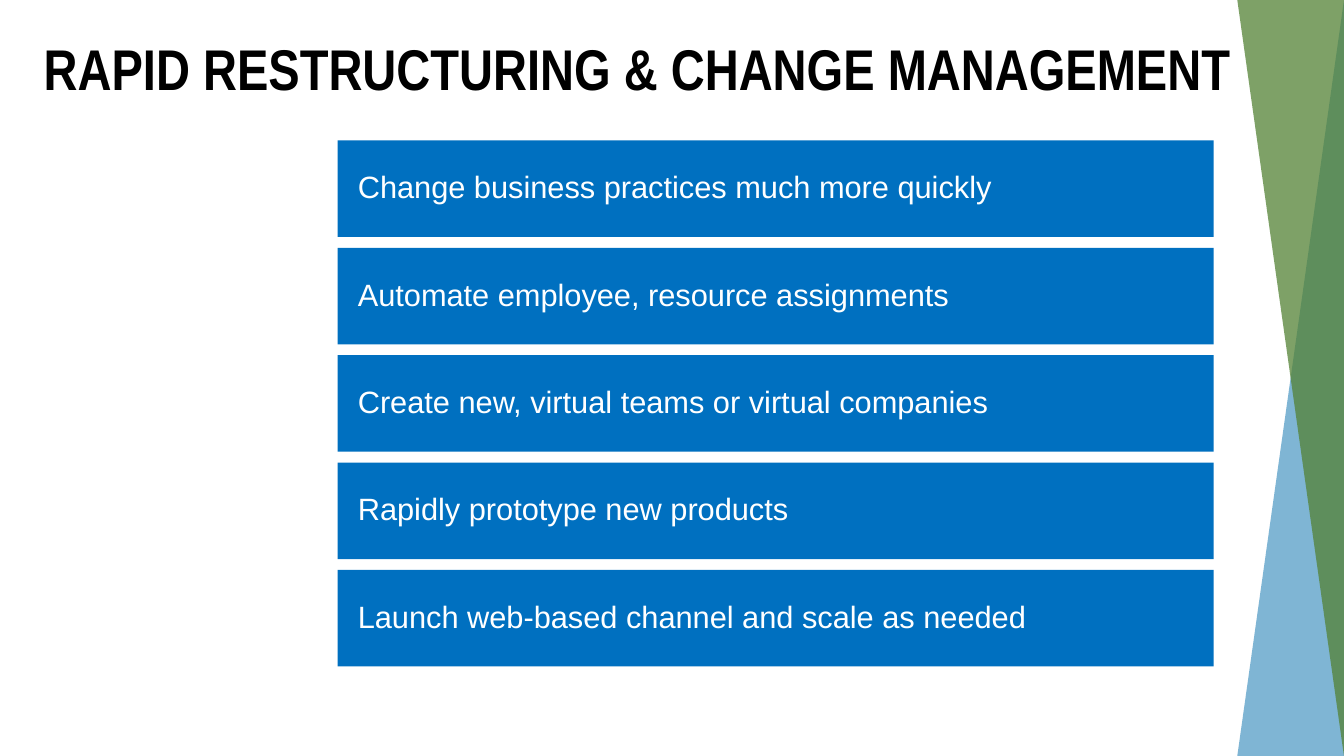
from lxml import etree
from pptx import Presentation
from pptx.dml.color import RGBColor
from pptx.enum.shapes import MSO_SHAPE
from pptx.enum.text import MSO_ANCHOR, MSO_AUTO_SIZE, PP_ALIGN
from pptx.oxml.ns import qn
from pptx.util import Pt

RECTANGLE = MSO_SHAPE.RECTANGLE
TOP, MIDDLE = MSO_ANCHOR.TOP, MSO_ANCHOR.MIDDLE
LEFT = PP_ALIGN.LEFT
FIXED_SIZE = MSO_AUTO_SIZE.NONE

COLOURS = {
    "title": "000000",
    "bar": "0070C0",
    "bar_text": "FFFFFF",
    "blue_wedge": "006CAB",
    "green_wedge": "548235",
}
TITLE = "RAPID RESTRUCTURING & CHANGE MANAGEMENT"
PRACTICES = [
    "Change business practices much more quickly",
    "Automate employee, resource assignments",
    "Create new, virtual teams or virtual companies",
    "Rapidly prototype new products",
    "Launch web-based channel and scale as needed",
]
PAGE_WIDTH, PAGE_HEIGHT = 960, 540
BAR_GAP = 7.7


def colour(name):
    return RGBColor.from_string(COLOURS[name])


def style_text(frame, text, font_name, size, colour_name, bold):
    frame.word_wrap = True
    frame.auto_size = FIXED_SIZE
    para = frame.paragraphs[0]
    para.text = text
    para.alignment = LEFT
    para.line_spacing = 0.9
    para.space_before = Pt(0)
    para.font.name = font_name
    para.font.size = Pt(size)
    para.font.bold = bold
    para.font.color.rgb = colour(colour_name)


def add_wedge(page, points, colour_name, opacity):
    corners = [(Pt(x), Pt(y)) for x, y in points]
    builder = page.shapes.build_freeform(*corners[0], scale=1.0)
    builder.add_line_segments(corners[1:], close=True)
    wedge = builder.convert_to_shape()
    wedge.shadow.inherit = False
    wedge.fill.solid()
    wedge.fill.fore_color.rgb = colour(colour_name)
    wedge.line.fill.background()
    fill_colour = wedge.fill._xPr.find(qn("a:solidFill"))[0]
    alpha = etree.SubElement(fill_colour, qn("a:alpha"))
    alpha.set("val", str(opacity * 1000))


def add_side_panel(page, left, top, width, height):
    right, bottom = left + width, top + height
    add_wedge(page, [(left, bottom), (right, bottom), (right, top)], "blue_wedge", 50)
    add_wedge(page, [(left, top), (right, top), (right, bottom)], "green_wedge", 75)


def add_title(page, left, top, width, height):
    title = page.shapes.title
    title.left, title.top = Pt(left), Pt(top)
    title.width, title.height = Pt(width), Pt(height)
    title.text_frame.vertical_anchor = TOP
    style_text(title.text_frame, TITLE, "Arial Narrow", 41, "title", True)


def add_practice_bars(page, left, top, width, height):
    count = len(PRACTICES)
    bar_height = (height - BAR_GAP * (count - 1)) / count
    for index, practice in enumerate(PRACTICES):
        bar_top = top + index * (bar_height + BAR_GAP)
        bar = page.shapes.add_shape(
            RECTANGLE, Pt(left), Pt(bar_top), Pt(width), Pt(bar_height)
        )
        bar.shadow.inherit = False
        bar.fill.solid()
        bar.fill.fore_color.rgb = colour("bar")
        bar.line.fill.background()
        frame = bar.text_frame
        frame.margin_left = frame.margin_right = Pt(14.4)
        frame.margin_top = frame.margin_bottom = Pt(11.5)
        frame.vertical_anchor = MIDDLE
        style_text(frame, practice, "Arial", 22, "bar_text", False)


def main():
    deck = Presentation()
    deck.slide_width, deck.slide_height = Pt(PAGE_WIDTH), Pt(PAGE_HEIGHT)
    page = deck.slides.add_slide(deck.slide_layouts[5])
    add_side_panel(page, 883.8, 0, 76.2, PAGE_HEIGHT)
    add_title(page, 24, 26, 893.5, 58.3)
    add_practice_bars(page, 241.2, 100.3, 625.7, 375.8)
    deck.save("out.pptx")


if __name__ == "__main__":
    main()
